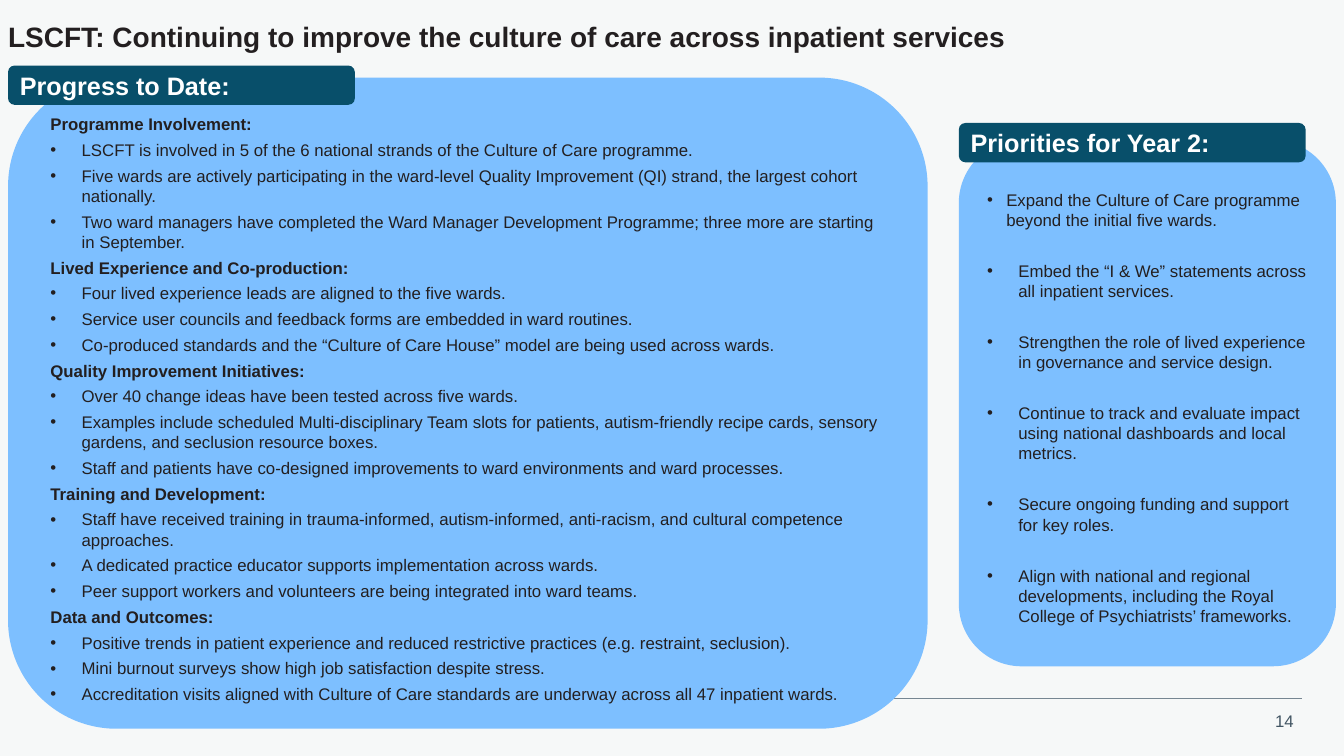
from lxml import etree
from pptx import Presentation
from pptx.dml.color import RGBColor
from pptx.enum.shapes import MSO_CONNECTOR, MSO_SHAPE
from pptx.enum.text import MSO_ANCHOR, MSO_AUTO_SIZE, PP_ALIGN
from pptx.oxml.ns import qn
from pptx.util import Pt

PX = 9144  # EMU per px, 100 px to the inch
ROUND = MSO_SHAPE.ROUNDED_RECTANGLE
LINE = MSO_CONNECTOR.STRAIGHT
LEFT, RIGHT = PP_ALIGN.LEFT, PP_ALIGN.RIGHT
TOP, MIDDLE = MSO_ANCHOR.TOP, MSO_ANCHOR.MIDDLE
FIXED = MSO_AUTO_SIZE.NONE

HUES = {
    "page": "F6F8F8",
    "panel": "7DBFFF",
    "tag": "084F6A",
    "ink": "231F20",
    "white": "FFFFFF",
    "rule": "768692",
    "number": "425563",
}

TITLE = "LSCFT: Continuing to improve the culture of care across inpatient services"

PROGRESS = {
    "Programme Involvement:": [
        "LSCFT is involved in 5 of the 6 national strands of the Culture of Care programme.",
        "Five wards are actively participating in the ward-level Quality Improvement (QI) strand, "
        "the largest cohort nationally.",
        "Two ward managers have completed the Ward Manager Development Programme; "
        "three more are starting in September.",
    ],
    "Lived Experience and Co-production:": [
        "Four lived experience leads are aligned to the five wards.",
        "Service user councils and feedback forms are embedded in ward routines.",
        "Co-produced standards and the “Culture of Care House” model are being used across wards.",
    ],
    "Quality Improvement Initiatives:": [
        "Over 40 change ideas have been tested across five wards.",
        "Examples include scheduled Multi-disciplinary Team slots for patients, "
        "autism-friendly recipe cards, sensory gardens, and seclusion resource boxes.",
        "Staff and patients have co-designed improvements to ward environments and ward processes.",
    ],
    "Training and Development:": [
        "Staff have received training in trauma-informed, autism-informed, anti-racism, "
        "and cultural competence approaches.",
        "A dedicated practice educator supports implementation across wards.",
        "Peer support workers and volunteers are being integrated into ward teams.",
    ],
    "Data and Outcomes:": [
        "Positive trends in patient experience and reduced restrictive practices "
        "(e.g. restraint, seclusion).",
        "Mini burnout surveys show high job satisfaction despite stress.",
        "Accreditation visits aligned with Culture of Care standards are underway "
        "across all 47 inpatient wards.",
    ],
}

PLANS = [
    "Expand the Culture of Care programme beyond the initial five wards.",
    "Embed the “I & We” statements across all inpatient services.",
    "Strengthen the role of lived experience in governance and service design.",
    "Continue to track and evaluate impact using national dashboards and local metrics.",
    "Secure ongoing funding and support for key roles.",
    "Align with national and regional developments, including the Royal College of "
    "Psychiatrists’ frameworks.",
]


def color(name):
    return RGBColor.from_string(HUES[name])


def write(para, text, size=12, hue="ink", bold=False, align=LEFT):
    para.alignment = align
    run = para.add_run()
    run.text = text
    font = run.font
    font.name, font.size, font.bold = "Arial", Pt(size), bold
    font.color.rgb = color(hue)


def place(holder, x, y, w, h, anchor=TOP):
    """Move a placeholder and clear its margins."""
    holder.left, holder.top = x * PX, y * PX
    holder.width, holder.height = w * PX, h * PX
    frame = holder.text_frame
    frame.auto_size, frame.word_wrap = FIXED, True
    frame.vertical_anchor = anchor
    frame.margin_left = frame.margin_right = 0
    frame.margin_top = frame.margin_bottom = 0
    return frame


def add_item(frame, text, gap, dent=31, head=False):
    """Add a list line: a bullet, or a bold heading without one."""
    first = not frame.paragraphs[0].runs
    para = frame.paragraphs[0] if first else frame.add_paragraph()
    props = para._p.get_or_add_pPr()
    props.set("marL", str(dent * PX))
    props.set("indent", str(-dent * PX))
    if head:
        etree.SubElement(props, qn("a:buNone"))
    else:
        etree.SubElement(props, qn("a:buChar")).set("char", "•")
    para.line_spacing = 1.0
    para.space_before = Pt(0 if first else gap)
    para.space_after = Pt(0)
    write(para, text, bold=head)


def add_block(slide, x, y, w, h, hue):
    block = slide.shapes.add_shape(ROUND, x * PX, y * PX, w * PX, h * PX)
    block.shadow.inherit = False
    block.fill.solid()
    block.fill.fore_color.rgb = color(hue)
    block.line.fill.background()
    return block


def add_tag(slide, x, y, text):
    frame = add_block(slide, x, y, 344, 39, "tag").text_frame
    frame.vertical_anchor = MIDDLE
    write(frame.paragraphs[0], text, size=18, hue="white", bold=True)


def add_foot(slide):
    rule = slide.shapes.add_connector(LINE, 45 * PX, 693 * PX, 1291 * PX, 693 * PX)
    rule.line.color.rgb = color("rule")
    rule.line.width = Pt(0.5)
    etree.SubElement(rule._element.spPr, qn("a:effectLst"))
    box = slide.shapes.add_textbox(1252 * PX, 700 * PX, 41 * PX, 30 * PX)
    box.text_frame.word_wrap = False
    write(box.text_frame.paragraphs[0], "14", hue="number", align=RIGHT)


def main():
    deck = Presentation()
    deck.slide_width, deck.slide_height = 1333 * PX, 750 * PX
    slide = deck.slides.add_slide(deck.slide_layouts[3])
    slide.background.fill.solid()
    slide.background.fill.fore_color.rgb = color("page")
    title, left, right = slide.placeholders

    # Title and footer
    frame = place(title, 8, 19, 1156, 34, MIDDLE)
    write(frame.paragraphs[0], TITLE, size=20, bold=True)
    add_foot(slide)

    # Panels, with the lists raised above them
    add_block(slide, 8, 77, 912, 646, "panel")
    add_block(slide, 951, 139, 374, 522, "panel")
    for holder in (left, right):
        slide.shapes._spTree.append(holder._element)

    # Progress list
    frame = place(left, 50, 113, 829, 584)
    for head, items in PROGRESS.items():
        add_item(frame, head, 4, head=True)
        for item in items:
            add_item(frame, item, 4)

    # Priorities list
    frame = place(right, 979, 188, 318, 448)
    for i, plan in enumerate(PLANS):
        add_item(frame, plan, 22, dent=31 if i else 19)

    # Panel tags
    add_tag(slide, 8, 65, "Progress to Date:")
    add_tag(slide, 951, 122, "Priorities for Year 2:")
    deck.save("out.pptx")


if __name__ == "__main__":
    main()
